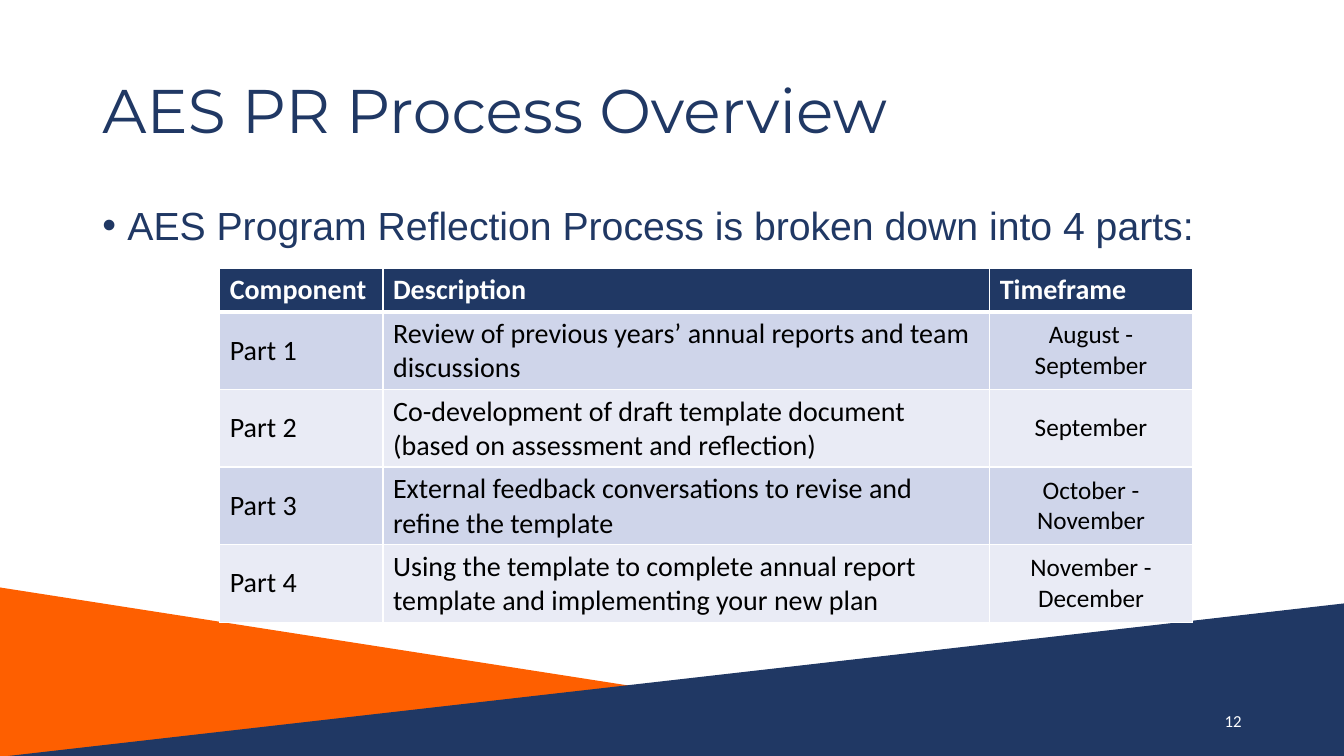
from dataclasses import dataclass

from lxml.etree import SubElement
from pptx import Presentation
from pptx.dml.color import RGBColor
from pptx.enum.shapes import MSO_SHAPE
from pptx.enum.text import MSO_ANCHOR, MSO_AUTO_SIZE, PP_ALIGN
from pptx.oxml.ns import qn
from pptx.util import Inches, Pt

COLUMNS, ROWS = 160, 90
CELL = Inches(1) / 12
COLORS = {
    "navy": "203864",
    "orange": "FE5F00",
    "white": "FFFFFF",
    "black": "000000",
    "band_dark": "CFD5EA",
    "band_light": "E9EBF5",
}


@dataclass(frozen=True)
class Area:
    column: float
    row: float
    columns: float
    rows: float

    def box(self) -> tuple[int, int, int, int]:
        return tuple(grid(n) for n in (self.column, self.row, self.columns, self.rows))


@dataclass(frozen=True)
class Wedge:
    area: Area
    apex: float
    color: str


@dataclass(frozen=True)
class Style:
    font: str
    size: int
    color: str
    bold: bool = False
    align: PP_ALIGN = PP_ALIGN.LEFT


@dataclass(frozen=True)
class Part:
    component: str
    description: str
    timeframe: str


WEDGES = (
    Wedge(Area(-0.6, 69.84, 129.24, 20.16), 0, "orange"),
    Wedge(Area(0.96, 71.76, 159.72, 18.24), 1, "navy"),
)
TITLE_AREA = Area(11, 4.8, 138, 17.4)
BODY_AREA = Area(11, 24, 138, 57.12)
NUMBER_AREA = Area(113, 83.4, 36, 4.8)
TABLE_AREA = Area(26.16, 31.92, 115.8, 42)
TABLE_COLUMNS = (19.44, 72.24, 24.12)
HEADER_ROWS = 5.04

TITLE_STYLE = Style("Montserrat", 44, "navy")
BODY_STYLE = Style("Arial", 28, "navy")
NUMBER_STYLE = Style("Calibri", 12, "white", align=PP_ALIGN.RIGHT)
HEADER_STYLE = Style("Calibri", 20, "white", bold=True)
CELL_STYLE = Style("Calibri", 20, "black")
TIME_STYLE = Style("Calibri", 18, "black", align=PP_ALIGN.CENTER)

HEADER = Part("Component", "Description", "Timeframe")
PARTS = (
    Part("Part 1", "Review of previous years’ annual reports and team discussions", "August - September"),
    Part("Part 2", "Co-development of draft template document (based on assessment and reflection)", "September"),
    Part("Part 3", "External feedback conversations to revise and refine the template", "October - November"),
    Part("Part 4", "Using the template to complete annual report template and implementing your new plan", "November - December"),
)


def grid(cells: float) -> int:
    return round(cells * CELL)


def rgb(color: str) -> RGBColor:
    return RGBColor.from_string(COLORS[color])


def write(frame, text: str, style: Style) -> None:
    frame.text = text
    para = frame.paragraphs[0]
    para.alignment = style.align
    for span in para.runs:
        span.font.name = style.font
        span.font.size = Pt(style.size)
        span.font.bold = style.bold
        span.font.color.rgb = rgb(style.color)


def add_wedge(page, wedge: Wedge) -> None:
    shape = page.shapes.add_shape(MSO_SHAPE.ISOSCELES_TRIANGLE, *wedge.area.box())
    shape.adjustments[0] = wedge.apex
    shape.shadow.inherit = False
    shape.fill.solid()
    shape.fill.fore_color.rgb = rgb(wedge.color)
    shape.line.fill.background()


def add_title(page, text: str) -> None:
    title = page.shapes.title
    title.left, title.top, title.width, title.height = TITLE_AREA.box()
    write(title.text_frame, text, TITLE_STYLE)
    title.text_frame.auto_size = MSO_AUTO_SIZE.NONE
    title.text_frame.vertical_anchor = MSO_ANCHOR.MIDDLE
    title.text_frame.paragraphs[0].line_spacing = 0.9


def add_text(page, area: Area, text: str, style: Style, anchor: MSO_ANCHOR):
    frame = page.shapes.add_textbox(*area.box()).text_frame
    frame.word_wrap = True
    frame.vertical_anchor = anchor
    write(frame, text, style)
    return frame.paragraphs[0]


def add_bullet(para) -> None:
    para.line_spacing = 0.9
    properties = para._p.get_or_add_pPr()
    properties.set("marL", str(grid(3)))
    properties.set("indent", str(grid(-3)))
    SubElement(properties, qn("a:buFont"), typeface="Arial")
    SubElement(properties, qn("a:buChar"), char="•")


def add_borders(cell, bottom: float) -> None:
    properties = cell._tc.get_or_add_tcPr()
    for side, width in (("L", 1), ("R", 1), ("T", 1), ("B", bottom)):
        line = SubElement(properties, qn(f"a:ln{side}"), w=str(Pt(width)))
        fill = SubElement(line, qn("a:solidFill"))
        SubElement(fill, qn("a:srgbClr"), val=COLORS["white"])


def fill_row(cells, part: Part, styles: tuple[Style, ...], color: str, bottom: float) -> None:
    texts = (part.component, part.description, part.timeframe)
    for cell, text, style in zip(cells, texts, styles):
        write(cell.text_frame, text, style)
        add_borders(cell, bottom)
        cell.fill.solid()
        cell.fill.fore_color.rgb = rgb(color)


def add_parts_table(page) -> None:
    table = page.shapes.add_table(len(PARTS) + 1, len(TABLE_COLUMNS), *TABLE_AREA.box()).table
    for column, width in zip(table.columns, TABLE_COLUMNS):
        column.width = grid(width)
    header, *rows = table.rows
    header.height = grid(HEADER_ROWS)
    fill_row(header.cells, HEADER, (HEADER_STYLE,) * 3, "navy", 3)
    for index, (row, part) in enumerate(zip(rows, PARTS)):
        row.height = grid((TABLE_AREA.rows - HEADER_ROWS) / len(PARTS))
        band = "band_light" if index % 2 else "band_dark"
        fill_row(row.cells, part, (CELL_STYLE, CELL_STYLE, TIME_STYLE), band, 1)
        for column in (0, 2):
            row.cells[column].vertical_anchor = MSO_ANCHOR.MIDDLE


def main() -> None:
    deck = Presentation()
    deck.slide_width, deck.slide_height = grid(COLUMNS), grid(ROWS)
    page = deck.slides.add_slide(deck.slide_layouts[5])
    for wedge in WEDGES:
        add_wedge(page, wedge)
    add_title(page, "AES PR Process Overview")
    lead = "AES Program Reflection Process is broken down into 4 parts:"
    add_bullet(add_text(page, BODY_AREA, lead, BODY_STYLE, MSO_ANCHOR.TOP))
    add_text(page, NUMBER_AREA, "12", NUMBER_STYLE, MSO_ANCHOR.MIDDLE)
    add_parts_table(page)
    deck.save("out.pptx")


if __name__ == "__main__":
    main()
